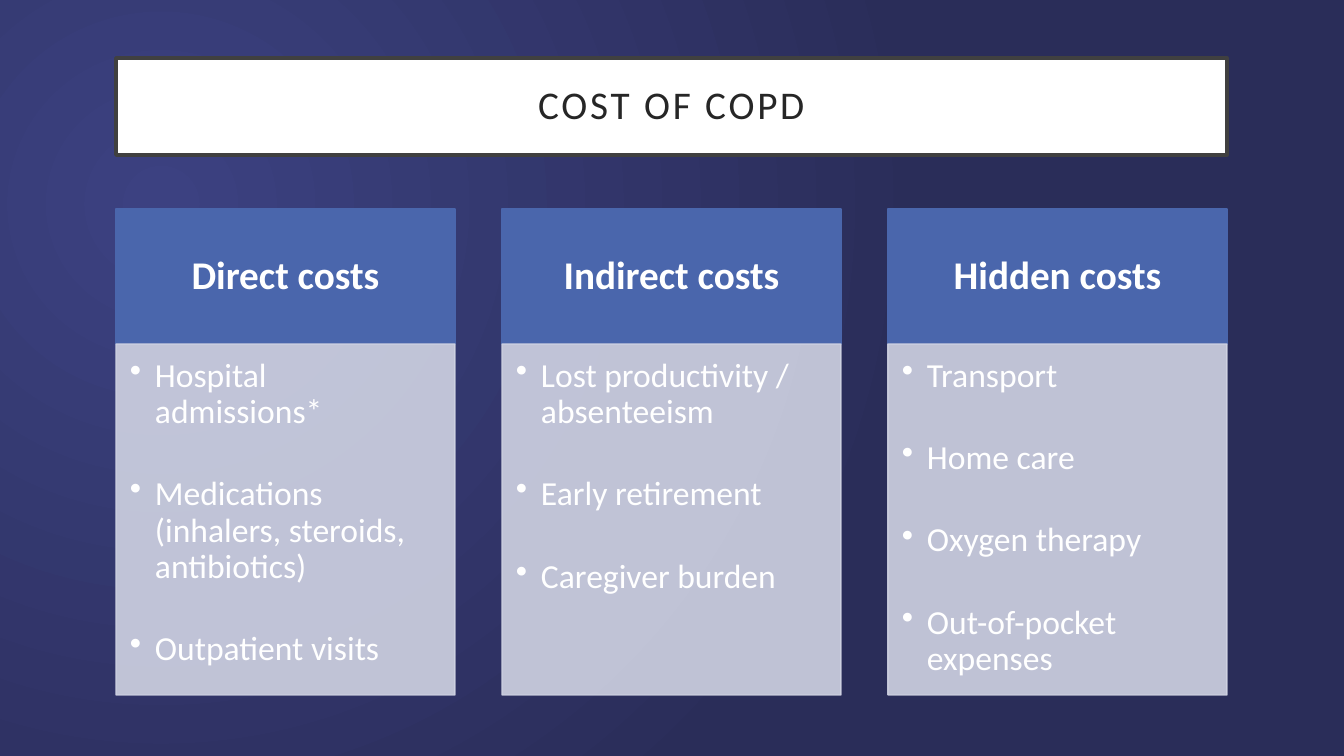
from lxml.etree import SubElement
from pptx import Presentation
from pptx.dml.color import RGBColor
from pptx.enum.shapes import MSO_SHAPE
from pptx.enum.text import MSO_ANCHOR, MSO_AUTO_SIZE, PP_ALIGN
from pptx.oxml.ns import qn
from pptx.util import Pt

EMU_PER_PX = 914400 / 100.8
COLORS = {
    "glow": "3C4181", "night": "2A2D59", "white": "FFFFFF", "ink": "262626",
    "frame": "404040", "header": "4A66AC", "panel": "D0D3E3",
}
COSTS = {
    "Direct costs": [
        "Hospital admissions*",
        "Medications (inhalers, steroids, antibiotics)",
        "Outpatient visits",
    ],
    "Indirect costs": [
        "Lost productivity / absenteeism",
        "Early retirement",
        "Caregiver burden",
    ],
    "Hidden costs": [
        "Transport",
        "Home care",
        "Oxygen therapy",
        "Out-of-pocket expenses",
    ],
}
LEFT, WIDTH, COLUMN_WIDTH = 116, 1111, 339
HEADER_TOP, HEADER_HEIGHT, PANEL_HEIGHT = 209, 135, 351


def px(length):
    return round(length * EMU_PER_PX)


def rgb(name):
    return RGBColor.from_string(COLORS[name])


def set_all(target, values):
    for name, value in values.items():
        setattr(target, name, value)


class CostSlide:
    font = "Calibri"
    line_spacing = 0.9

    def __init__(self, prs):
        self.slide = prs.slides.add_slide(prs.slide_layouts[5])

    def background(self):
        fill = self.slide.background.fill
        fill.gradient()
        for stop, name in zip(fill.gradient_stops, ("glow", "night")):
            stop.color.rgb = rgb(name)
        grad = next(self.slide.element.iter(qn("a:gradFill")))
        grad.remove(grad.find(qn("a:lin")))
        circle = SubElement(grad, qn("a:path"), path="circle")
        SubElement(circle, qn("a:fillToRect"),
                   l="50000", t="55000", r="125000", b="100000")

    def paint(self, sp, fill, line, line_width, opacity=100):
        sp.fill.solid()
        sp.fill.fore_color.rgb = rgb(fill)
        sp.line.color.rgb = rgb(line)
        sp.line.width = Pt(line_width)
        if opacity < 100:
            for color in sp.element.spPr.iter(qn("a:srgbClr")):
                SubElement(color, qn("a:alpha"), val=str(opacity * 1000))

    def frame(self, sp, insets, anchor):
        tf = sp.text_frame
        sides = ("margin_left", "margin_top", "margin_right", "margin_bottom")
        set_all(tf, dict(zip(sides, map(px, insets))))
        set_all(tf, {"word_wrap": True, "auto_size": MSO_AUTO_SIZE.NONE,
                     "vertical_anchor": anchor})
        return tf

    def add_text(self, p, text, align, size, color, bold=False):
        set_all(p, {"alignment": align, "line_spacing": self.line_spacing})
        r = p.add_run()
        r.text = text
        set_all(r.font, {"name": self.font, "size": Pt(size), "bold": bold})
        r.font.color.rgb = rgb(color)
        return r

    def title(self, text, left, top, width, height):
        sp = self.slide.shapes.title
        set_all(sp, {"left": px(left), "top": px(top),
                     "width": px(width), "height": px(height)})
        self.paint(sp, "white", "frame", 2.5)
        tf = self.frame(sp, (20, 20, 20, 20), MSO_ANCHOR.MIDDLE)
        r = self.add_text(tf.paragraphs[0], text, PP_ALIGN.CENTER, 28, "ink")
        r._r.get_or_add_rPr().set("spc", "200")

    def box(self, left, top, width, height):
        sp = self.slide.shapes.add_shape(
            MSO_SHAPE.RECTANGLE, px(left), px(top), px(width), px(height))
        sp.shadow.inherit = False
        return sp

    def header(self, text, *place):
        sp = self.box(*place)
        self.paint(sp, "header", "header", 1)
        tf = self.frame(sp, (22, 12, 22, 12), MSO_ANCHOR.MIDDLE)
        self.add_text(tf.paragraphs[0], text, PP_ALIGN.CENTER, 28, "white", True)

    def bullet_panel(self, items, *place):
        sp = self.box(*place)
        self.paint(sp, "panel", "panel", 1, opacity=90)
        tf = self.frame(sp, (14, 14, 19, 21), MSO_ANCHOR.TOP)
        for i, item in enumerate(items):
            p = tf.add_paragraph() if i else tf.paragraphs[0]
            pPr = p._p.get_or_add_pPr()
            pPr.set("marL", str(px(25)))
            pPr.set("indent", str(-px(25)))
            SubElement(pPr, qn("a:buChar"), char="•")
            self.add_text(p, item, PP_ALIGN.LEFT, 24, "white")
            if i:
                p.space_before = Pt(33)


def main():
    prs = Presentation()
    set_all(prs, {"slide_width": px(1344), "slide_height": px(756)})
    s = CostSlide(prs)
    s.background()
    s.title("COST OF COPD", LEFT, 58, WIDTH, 97)
    step = (WIDTH - COLUMN_WIDTH) // (len(COSTS) - 1)
    for i, (heading, items) in enumerate(COSTS.items()):
        left = LEFT + i * step
        s.header(heading, left, HEADER_TOP, COLUMN_WIDTH, HEADER_HEIGHT)
        s.bullet_panel(items, left, HEADER_TOP + HEADER_HEIGHT,
                       COLUMN_WIDTH, PANEL_HEIGHT)
    prs.save("out.pptx")


if __name__ == "__main__":
    main()
